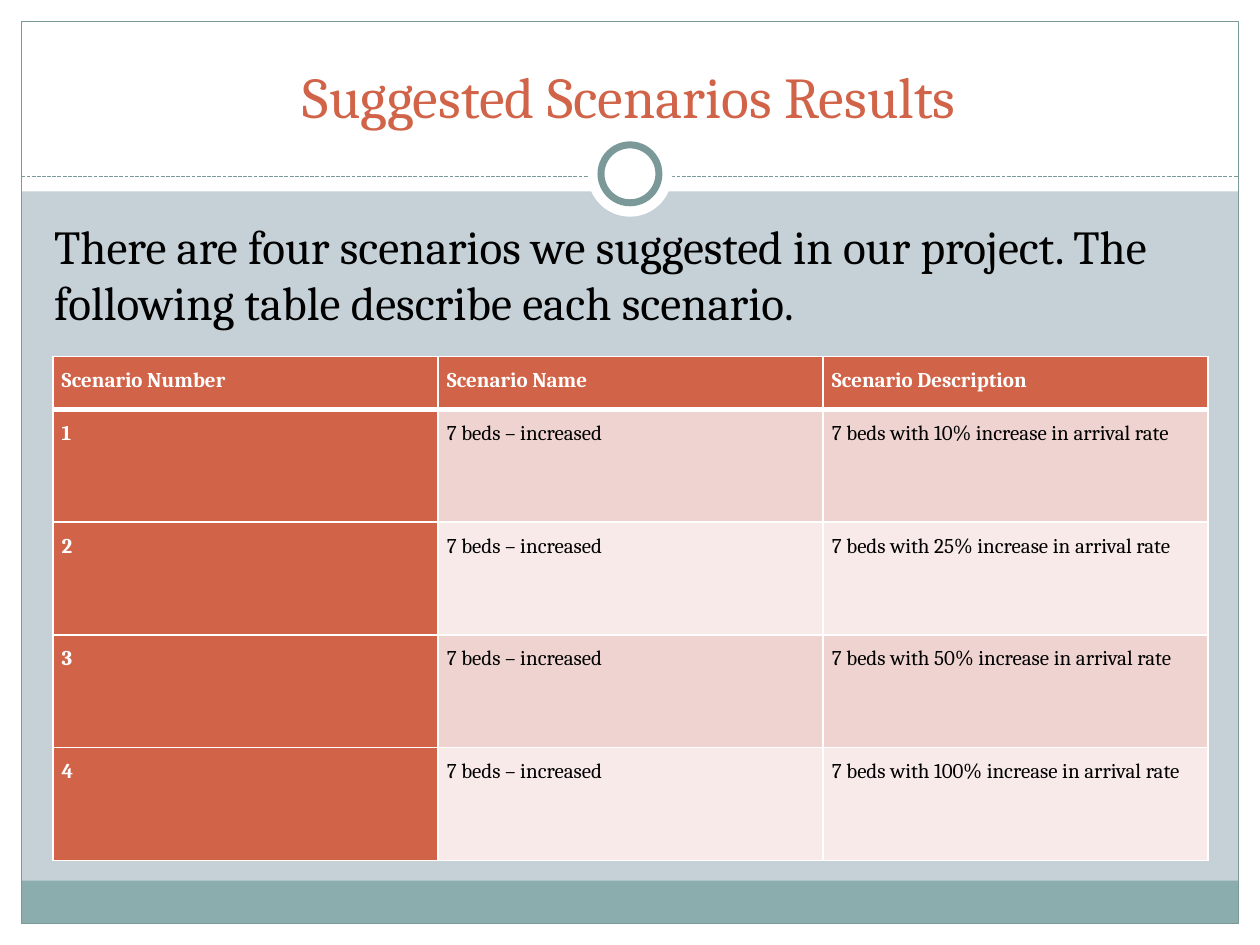
from dataclasses import dataclass
from typing import Optional

from lxml import etree
from pptx import Presentation
from pptx.dml.color import RGBColor
from pptx.enum.dml import MSO_LINE
from pptx.enum.shapes import MSO_CONNECTOR, MSO_SHAPE
from pptx.enum.text import MSO_ANCHOR, MSO_AUTO_SIZE, PP_ALIGN
from pptx.oxml.ns import qn
from pptx.util import Inches, Pt

RECTANGLE = MSO_SHAPE.RECTANGLE
OVAL = MSO_SHAPE.OVAL
STRAIGHT = MSO_CONNECTOR.STRAIGHT
SHORT_DASH = MSO_LINE.SQUARE_DOT
TOP, BOTTOM = MSO_ANCHOR.TOP, MSO_ANCHOR.BOTTOM
LEFT, CENTER, JUSTIFY = PP_ALIGN.LEFT, PP_ALIGN.CENTER, PP_ALIGN.JUSTIFY

FONT = "Cambria"
COLORS = {
    "background": "C5D1D7",
    "white": "FFFFFF",
    "black": "000000",
    "footer": "8CADAE",
    "frame": "7C999A",
    "accent": "D16349",
    "dark_band": "EED3D0",
    "light_band": "F7EAE9",
}

SLIDE_WIDTH, SLIDE_HEIGHT = Inches(10), Inches(7.5)
GRID_COLUMNS, GRID_ROWS = 1000, 750


def across(columns: float) -> int:
    return round(SLIDE_WIDTH * columns / GRID_COLUMNS)


def down(rows: float) -> int:
    return round(SLIDE_HEIGHT * rows / GRID_ROWS)


@dataclass(frozen=True)
class Box:
    left: float
    top: float
    width: float
    height: float

    def lengths(self) -> tuple[int, int, int, int]:
        return across(self.left), down(self.top), across(self.width), down(self.height)


@dataclass(frozen=True)
class Panel:
    box: Box
    fill: Optional[str] = "white"
    kind: int = RECTANGLE
    line_width: float = 0


@dataclass(frozen=True)
class TextStyle:
    size: float
    color: str
    align: int
    bold: bool = False


MARGIN = 17
BACK_PANELS = [
    Panel(Box(0, GRID_ROWS - MARGIN, GRID_COLUMNS, MARGIN)),
    Panel(Box(0, 0, GRID_COLUMNS, 152)),
    Panel(Box(0, 0, MARGIN, GRID_ROWS)),
    Panel(Box(GRID_COLUMNS - MARGIN, 0, MARGIN, GRID_ROWS)),
    Panel(Box(MARGIN, 699, GRID_COLUMNS - 2 * MARGIN, 34), "footer"),
    Panel(Box(MARGIN, MARGIN, GRID_COLUMNS - 2 * MARGIN, GRID_ROWS - 2 * MARGIN), None, line_width=0.75),
]
RING_PANELS = [
    Panel(Box(466.5, 105, 67, 67), kind=OVAL),
    Panel(Box(477, 115, 46, 46), kind=OVAL, line_width=4),
]
DIVIDER_ROW = 140

TITLE_BOX = Box(33, 25, 933, 83)
BODY_BOX = Box(33, 167, 930, 500)
TABLE_BOX = Box(42, 283, 917, 400)
HEADER_HEIGHT = 42
HEADERS = ["Scenario Number", "Scenario Name", "Scenario Description"]
INCREASES = [10, 25, 50, 100]


def rgb(name: str) -> RGBColor:
    return RGBColor.from_string(COLORS[name])


def draw_panel(slide, panel: Panel) -> None:
    shape = slide.shapes.add_shape(panel.kind, *panel.box.lengths())
    shape.shadow.inherit = False
    if panel.fill:
        shape.fill.solid()
        shape.fill.fore_color.rgb = rgb(panel.fill)
    else:
        shape.fill.background()
    if panel.line_width:
        shape.line.color.rgb = rgb("frame")
        shape.line.width = Pt(panel.line_width)
    else:
        shape.line.fill.background()


def draw_divider(slide) -> None:
    row = down(DIVIDER_ROW)
    connector = slide.shapes.add_connector(STRAIGHT, across(MARGIN), row, across(GRID_COLUMNS - MARGIN), row)
    connector.line.color.rgb = rgb("frame")
    connector.line.width = Pt(0.75)
    connector.line.dash_style = SHORT_DASH
    etree.SubElement(connector.element.spPr, qn("a:effectLst"))


def write_text(text_frame, text: str, style: TextStyle):
    text_frame.text = text
    paragraph = text_frame.paragraphs[0]
    paragraph.alignment = style.align
    font = paragraph.runs[0].font
    font.name, font.size, font.bold = FONT, Pt(style.size), style.bold
    font.color.rgb = rgb(style.color)
    return paragraph


def fill_placeholder(placeholder, box: Box, text: str, style: TextStyle, anchor: int) -> None:
    placeholder.left, placeholder.top, placeholder.width, placeholder.height = box.lengths()
    text_frame = placeholder.text_frame
    text_frame.word_wrap = True
    text_frame.auto_size = MSO_AUTO_SIZE.NONE
    text_frame.vertical_anchor = anchor
    properties = write_text(text_frame, text, style)._p.get_or_add_pPr()
    properties.set("marL", "0")
    properties.set("indent", "0")
    etree.SubElement(properties, qn("a:buNone"))
    placeholder.element.getparent().append(placeholder.element)


def set_borders(cell, widths: dict[str, float]) -> None:
    properties = cell._tc.get_or_add_tcPr()
    for side, width in widths.items():
        line = etree.SubElement(properties, qn(f"a:ln{side}"), w=str(Pt(width)))
        fill = etree.SubElement(line, qn("a:solidFill"))
        etree.SubElement(fill, qn("a:srgbClr"), val=COLORS["white"])


def draw_cell(cell, text: str, row: int, column: int) -> None:
    is_heading = row == 0 or column == 0
    cell.margin_left = cell.margin_right = across(7)
    cell.margin_top = cell.margin_bottom = 0
    cell.vertical_anchor = TOP
    style = TextStyle(12, "white" if is_heading else "black", JUSTIFY, is_heading)
    write_text(cell.text_frame, text, style).line_spacing = 1.5
    set_borders(cell, {"L": 1, "R": 1, "T": 3 if row == 1 else 1, "B": 3 if row == 0 else 1})
    band = "dark_band" if row % 2 else "light_band"
    cell.fill.solid()
    cell.fill.fore_color.rgb = rgb("accent" if is_heading else band)


def draw_table(slide) -> None:
    scenarios = [
        [str(number), "7 beds – increased", f"7 beds with {increase}% increase in arrival rate"]
        for number, increase in enumerate(INCREASES, start=1)
    ]
    rows = [HEADERS] + scenarios
    table = slide.shapes.add_table(len(rows), len(HEADERS), *TABLE_BOX.lengths()).table
    for column in table.columns:
        column.width = across(TABLE_BOX.width / len(HEADERS))
    scenario_height = (TABLE_BOX.height - HEADER_HEIGHT) / len(scenarios)
    for row, texts in enumerate(rows):
        table.rows[row].height = down(scenario_height if row else HEADER_HEIGHT)
        for column, text in enumerate(texts):
            draw_cell(table.cell(row, column), text, row, column)


def main() -> None:
    presentation = Presentation()
    presentation.slide_width, presentation.slide_height = SLIDE_WIDTH, SLIDE_HEIGHT
    slide = presentation.slides.add_slide(presentation.slide_layouts[1])
    slide.background.fill.solid()
    slide.background.fill.fore_color.rgb = rgb("background")
    for panel in BACK_PANELS:
        draw_panel(slide, panel)
    draw_divider(slide)
    for panel in RING_PANELS:
        draw_panel(slide, panel)
    title, body = slide.shapes.title, slide.placeholders[1]
    fill_placeholder(title, TITLE_BOX, "Suggested Scenarios Results", TextStyle(33, "accent", CENTER), BOTTOM)
    introduction = "There are four scenarios we suggested in our project. The following table describe each scenario."
    fill_placeholder(body, BODY_BOX, introduction, TextStyle(27, "black", LEFT), TOP)
    draw_table(slide)
    presentation.save("out.pptx")


if __name__ == "__main__":
    main()
